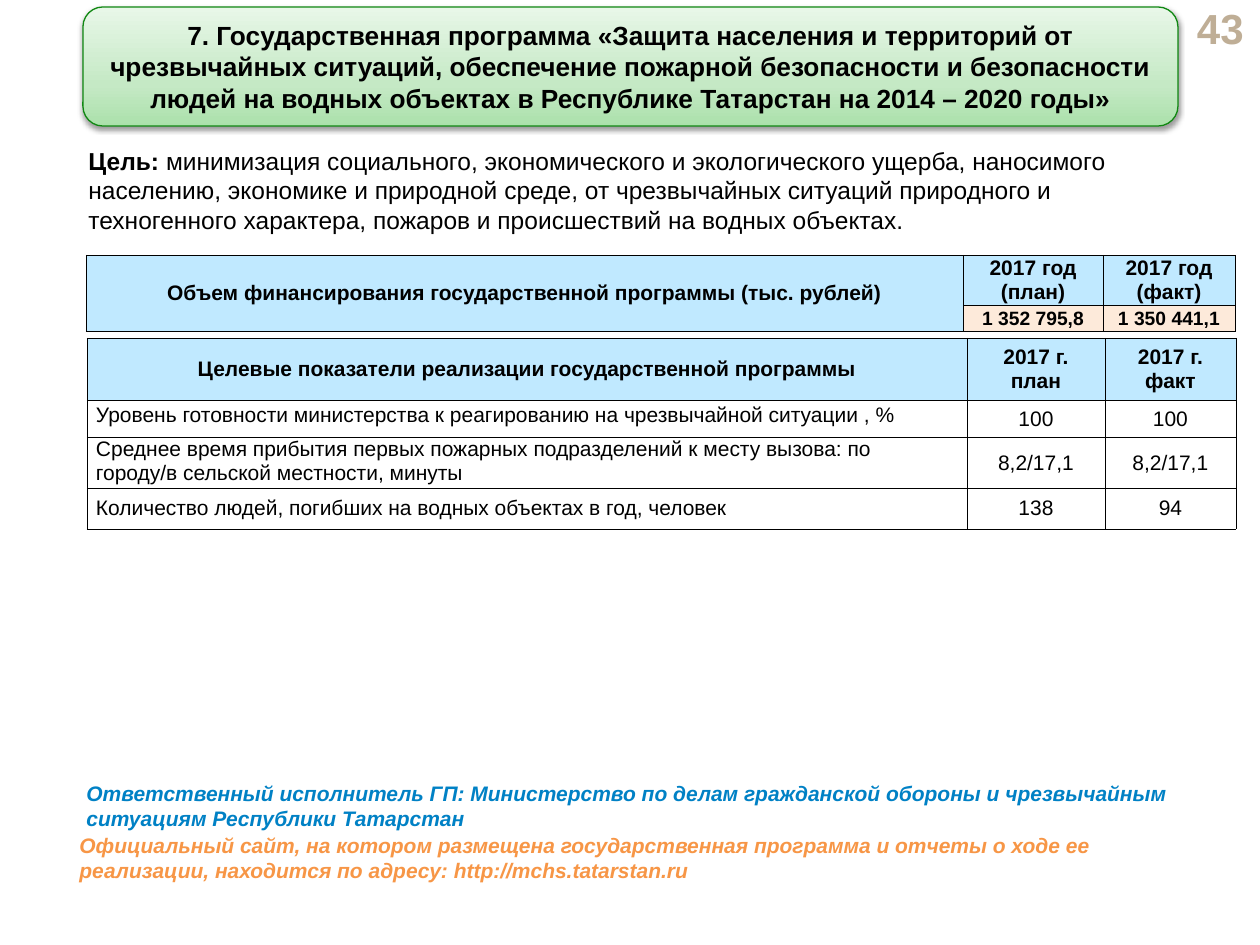
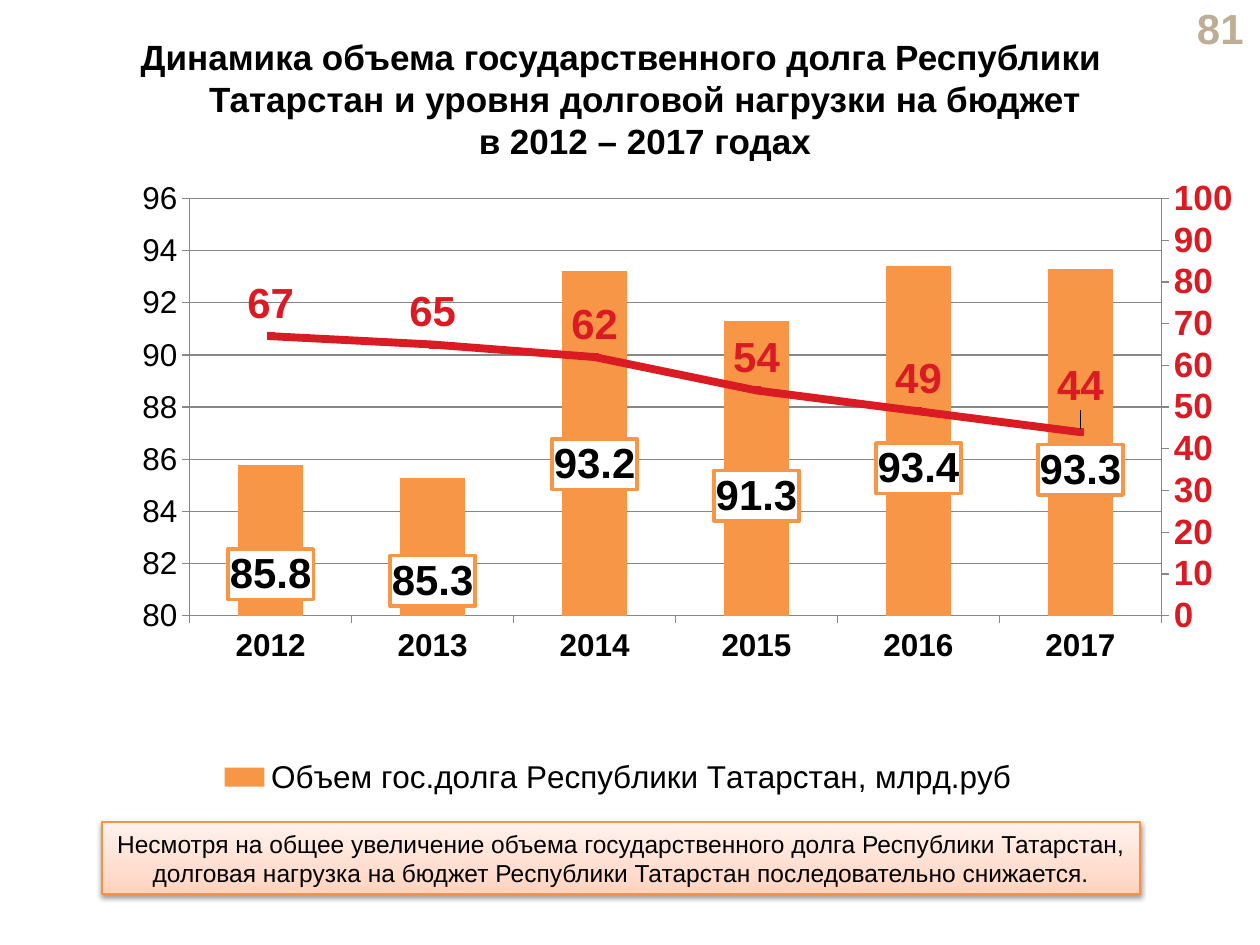
from dataclasses import dataclass

from pptx import Presentation
from pptx import util as u
from pptx.chart import axis as chart_axis
from pptx.chart import data as chart_data
from pptx.dml import color
from pptx.enum import chart as charts
from pptx.enum import shapes, text
from pptx.oxml import parse_xml
from pptx.oxml.ns import nsdecls, qn

PX_PER_INCH = 126
FONT = "Arial"
COLORS = {
    "black": "000000", "white": "FFFFFF", "page": "BFAE96", "header": "C0E9FF",
    "amount": "FDEADA", "owner": "0081C5", "orange": "F79646", "red": "DA1B23",
    "green_line": "108812", "note_line": "F69240", "grid": "868686",
}
GREEN_STOPS = ((0, "ABE1AB"), (35, "C5E9C5"), (100, "E8F7E8"))
PEACH_STOPS = ((0, "FFD2BD"), (35, "FFDED0"), (100, "FFF2ED"))
ALIGN = text.PP_ALIGN
MIDDLE, TOP = text.MSO_ANCHOR.MIDDLE, text.MSO_ANCHOR.TOP


@dataclass
class Box:
    """Place in px."""
    left: int
    top: int
    width: int
    height: int


@dataclass
class Style:
    """Look of a paragraph."""
    size: int
    color: str = "black"
    bold: bool = False
    italic: bool = False
    align: ALIGN = ALIGN.LEFT
    hanging: int = 0


@dataclass
class Panel:
    """Gradient panel with a shadow."""
    kind: shapes.MSO_SHAPE
    stops: tuple
    line: str


@dataclass
class Cell:
    """Content and look of a table cell."""
    words: str
    style: Style
    fill: str = "white"
    margins: tuple = (4, 6)
    anchor: text.MSO_ANCHOR = MIDDLE
    spacing: float = 1.0


TITLE_PANEL = Panel(shapes.MSO_SHAPE.ROUNDED_RECTANGLE, GREEN_STOPS, "green_line")
NOTE_PANEL = Panel(shapes.MSO_SHAPE.RECTANGLE, PEACH_STOPS, "note_line")
HEAD = Style(12, bold=True, align=ALIGN.CENTER)


def px(length: int) -> u.Emu:
    """Turn px into EMU."""
    return u.Emu(round(length * 914400 / PX_PER_INCH))


def place(box: Box) -> tuple:
    """Give a box as EMU lengths."""
    return px(box.left), px(box.top), px(box.width), px(box.height)


def rgb(name: str) -> color.RGBColor:
    """Look a colour up."""
    return color.RGBColor.from_string(COLORS[name])


def set_font(font, size: int, name: str, bold: bool = False, italic: bool = False) -> None:
    """Set every font property."""
    font.name, font.size, font.bold, font.italic = FONT, u.Pt(size), bold, italic
    font.color.rgb = rgb(name)


def write(frame, words: str, style: Style, anchor=TOP) -> None:
    """Fill a text frame, one paragraph a line."""
    frame.word_wrap = True
    frame.vertical_anchor = anchor
    frame.text = words
    for paragraph in frame.paragraphs:
        paragraph.alignment = style.align
        if style.hanging:
            properties = paragraph._p.get_or_add_pPr()
            properties.set("marL", str(px(style.hanging)))
            properties.set("indent", str(-px(style.hanging)))
        set_font(paragraph.font, style.size, style.color, style.bold, style.italic)


def add_text(slide, box: Box, words: str, style: Style, anchor=TOP):
    """Add a text box."""
    shape = slide.shapes.add_textbox(*place(box))
    write(shape.text_frame, words, style, anchor)
    return shape


def add_panel(slide, box: Box, panel: Panel, words: str, style: Style) -> None:
    """Add a gradient panel with text."""
    shape = slide.shapes.add_shape(panel.kind, *place(box))
    stops = "".join(f'<a:gs pos="{position * 1000}"><a:srgbClr val="{value}"/></a:gs>'
                    for position, value in panel.stops)
    shape._element.spPr.append(parse_xml(
        f'<a:gradFill {nsdecls("a")} rotWithShape="1"><a:gsLst>{stops}</a:gsLst>'
        '<a:lin ang="16200000" scaled="0"/></a:gradFill>'))
    shape.line.color.rgb = rgb(panel.line)
    shape.line.width = u.Pt(0.75)
    shape.shadow.inherit = False
    shape._element.spPr.find(qn("a:effectLst")).append(parse_xml(
        f'<a:outerShdw {nsdecls("a")} blurRad="{u.Pt(3.1)}" dist="{u.Pt(1.6)}" dir="5400000" '
        'rotWithShape="0"><a:srgbClr val="000000"><a:alpha val="38000"/></a:srgbClr></a:outerShdw>'))
    write(shape.text_frame, words, style, MIDDLE)


def add_slide(presentation, number: int):
    """Add a blank slide with its page number."""
    slide = presentation.slides.add_slide(presentation.slide_layouts[6])
    add_text(slide, Box(1176, 6, 80, 43), str(number),
             Style(24, "page", True, align=ALIGN.RIGHT), MIDDLE)
    return slide


def fill_cell(cell, content: Cell) -> None:
    """Draw borders, fill and text of a cell."""
    properties = cell._tc.get_or_add_tcPr()
    for side in "LRTB":
        properties.append(parse_xml(
            f'<a:ln{side} {nsdecls("a")} w="{u.Pt(0.25)}"><a:solidFill>'
            f'<a:srgbClr val="{COLORS["black"]}"/></a:solidFill></a:ln{side}>'))
    cell.fill.solid()
    cell.fill.fore_color.rgb = rgb(content.fill)
    across, down = content.margins
    cell.margin_left = cell.margin_right = px(across)
    cell.margin_top = cell.margin_bottom = px(down)
    write(cell.text_frame, content.words, content.style)
    cell.vertical_anchor = content.anchor
    cell.text_frame.paragraphs[0].line_spacing = content.spacing


def add_table(slide, left: int, top: int, widths: list, heights: list, rows: list):
    """Add a table of cells."""
    box = Box(left, top, sum(widths), sum(heights))
    table = slide.shapes.add_table(len(heights), len(widths), *place(box)).table
    table.first_row = table.horz_banding = False
    for column, width in zip(table.columns, widths):
        column.width = px(width)
    for row, height in zip(table.rows, heights):
        row.height = px(height)
    for row, contents in enumerate(rows):
        for column, content in enumerate(contents):
            fill_cell(table.cell(row, column), content)
    return table


def label_xml(offsets: dict, position: str, name: str, boxed: bool):
    """Build data labels with offsets from their usual places."""
    frame = (f'<c:spPr><a:solidFill><a:srgbClr val="{COLORS["white"]}"/></a:solidFill>'
             f'<a:ln w="{u.Pt(2)}"><a:solidFill><a:srgbClr val="{COLORS["orange"]}"/>'
             '</a:solidFill></a:ln></c:spPr>') if boxed else ""
    flags = "".join(f'<c:show{flag} val="{int(flag == "Val")}"/>' for flag in
                    ("LegendKey", "Val", "CatName", "SerName", "Percent", "BubbleSize"))
    look = (f'{frame}<c:txPr><a:bodyPr/><a:p><a:pPr><a:defRPr sz="2400" b="1"><a:solidFill>'
            f'<a:srgbClr val="{COLORS[name]}"/></a:solidFill><a:latin typeface="{FONT}"/>'
            f'</a:defRPr></a:pPr></a:p></c:txPr><c:dLblPos val="{position}"/>{flags}')
    points = "".join(
        f'<c:dLbl><c:idx val="{index}"/><c:layout><c:manualLayout><c:x val="{x}"/>'
        f'<c:y val="{y}"/></c:manualLayout></c:layout>{look}</c:dLbl>'
        for index, (x, y) in offsets.items())
    return parse_xml(f'<c:dLbls {nsdecls("c", "a")}>{points}{look}</c:dLbls>')


def layout_xml(x: float, y: float, width: float, height: float, inner: bool = False):
    """Build a manual layout in fractions of the chart."""
    target = '<c:layoutTarget val="inner"/>' if inner else ""
    return parse_xml(
        f'<c:layout {nsdecls("c")}><c:manualLayout>{target}<c:xMode val="edge"/>'
        f'<c:yMode val="edge"/><c:x val="{x}"/><c:y val="{y}"/><c:w val="{width}"/>'
        f'<c:h val="{height}"/></c:manualLayout></c:layout>')


def remove_children(element, tag: str) -> None:
    """Remove every child with a tag."""
    for child in element.findall(qn(tag)):
        element.remove(child)


def move_to_right_axis(chart) -> chart_axis.ValueAxis:
    """Turn the last bar series into a line on a second axis."""
    area = chart._chartSpace.chart.plotArea
    bars = area.find(qn("c:barChart"))
    series = bars.findall(qn("c:ser"))[-1]
    remove_children(series, "c:invertIfNegative")
    line = parse_xml(
        f'<c:lineChart {nsdecls("c")}><c:grouping val="standard"/><c:varyColors val="0"/>'
        '<c:marker val="1"/><c:axId val="50010"/><c:axId val="50020"/></c:lineChart>')
    line.insert(2, series)
    bars.addnext(line)
    start = ('<c:axId val="{}"/><c:scaling><c:orientation val="minMax"/></c:scaling>'
             '<c:delete val="{}"/><c:axPos val="{}"/>')
    categories = parse_xml(
        f'<c:catAx {nsdecls("c")}>{start.format(50010, 1, "b")}<c:crossAx val="50020"/></c:catAx>')
    values = parse_xml(
        f'<c:valAx {nsdecls("c")}>{start.format(50020, 0, "r")}'
        '<c:numFmt formatCode="General" sourceLinked="0"/><c:majorTickMark val="out"/>'
        '<c:minorTickMark val="none"/><c:tickLblPos val="nextTo"/><c:crossAx val="50010"/>'
        '<c:crosses val="max"/></c:valAx>')
    last = area.findall(qn("c:valAx"))[-1]
    last.addnext(categories)
    categories.addnext(values)
    return chart_axis.ValueAxis(values)


def style_axis(axis, size: int, name: str) -> None:
    """Set the line, ticks and labels of an axis."""
    axis.format.line.color.rgb = rgb("grid")
    axis.major_tick_mark = charts.XL_TICK_MARK.OUTSIDE
    set_font(axis.tick_labels.font, size, name, bold=True)


def add_debt_chart(slide, box: Box) -> None:
    """Add debt bars with the debt load line."""
    data = chart_data.CategoryChartData()
    data.categories = [str(year) for year in range(2012, 2018)]
    data.add_series("Объем гос.долга Республики Татарстан, млрд.руб",
                    (85.8, 85.3, 93.2, 91.3, 93.4, 93.3))
    data.add_series("Долговая нагрузка на бюджет Республики Татарстан,%", (67, 65, 62, 54, 49, 44))
    chart = slide.shapes.add_chart(charts.XL_CHART_TYPE.COLUMN_STACKED, *place(box), data).chart
    set_font(chart.font, 18, "black")
    chart.has_title = False
    right_axis = move_to_right_axis(chart)
    left_axis = chart.value_axis
    style_axis(chart.category_axis, 18, "black")
    for axis, name, low, step in ((left_axis, "orange", 75, 5), (right_axis, "red", 0, 10)):
        style_axis(axis, 20, name)
        axis.minimum_scale, axis.maximum_scale, axis.major_unit = low, 100, step
    left_axis.tick_labels.number_format = "#,##0"
    left_axis.tick_labels.number_format_is_linked = False
    left_axis.major_gridlines.format.line.color.rgb = rgb("grid")

    bars, lines = chart.plots
    bars.gap_width, bars.overlap, bars.vary_by_categories = 150, 100, False
    debt, load = bars.series[0], lines.series[0]
    load.smooth = False
    load.format.line.color.rgb = rgb("red")
    load.format.line.width = u.Pt(4.5)
    load.marker.style, load.marker.size = charts.XL_MARKER_STYLE.SQUARE, 4
    for shape_format, name in ((debt.format, "orange"), (load.marker.format, "red")):
        shape_format.fill.solid()
        shape_format.fill.fore_color.rgb = rgb(name)
    load.marker.format.line.color.rgb = rgb("red")
    drops = {index: (0, y) for index, y in enumerate((0.05, 0.05, 0.03, 0.04, 0.04, 0.04))}
    for series, labels in ((debt, label_xml(drops, "ctr", "black", True)),
                           (load, label_xml({5: (0, -0.02)}, "t", "red", False))):
        series._element.find(qn("c:cat")).addprevious(labels)

    chart.has_legend = True
    legend = chart.legend
    legend.position = charts.XL_LEGEND_POSITION.BOTTOM
    legend.include_in_layout = False
    set_font(legend.font, 18, "black")
    remove_children(legend._element, "c:layout")
    legend._element.get_or_add_legendPos().addnext(layout_xml(0.12, 0.88, 0.74, 0.12))
    area = chart._chartSpace.chart.plotArea
    remove_children(area, "c:layout")
    area.insert(0, layout_xml(0.1, 0.09, 0.84, 0.61, inner=True))


def build_program_slide(presentation) -> None:
    """Build the state program slide."""
    slide = add_slide(presentation, 43)
    add_panel(slide, Box(83, 7, 1095, 119), TITLE_PANEL,
              "7. Государственная программа «Защита населения и территорий от чрезвычайных ситуаций, "
              "обеспечение пожарной безопасности и безопасности людей на водных объектах "
              "в Республике Татарстан на 2014 – 2020 годы»", HEAD_TITLE)
    goal = add_text(slide, Box(76, 139, 1129, 102), "Цель: ", Style(14), MIDDLE)
    paragraph = goal.text_frame.paragraphs[0]
    paragraph.runs[0].font.bold = True
    paragraph.add_run().text = (
        "минимизация социального, экономического и экологического ущерба, наносимого населению, "
        "экономике и природной среде, от чрезвычайных ситуаций природного и техногенного характера, "
        "пожаров и происшествий на водных объектах.")

    amount = Style(11, bold=True, align=ALIGN.CENTER)
    funding = [[Cell(words, HEAD, "header", (8, 0)) for words in (
        "Объем финансирования государственной программы (тыс. рублей)",
        "2017 год (план)", "2017 год (факт)")],
        [Cell(words, amount, "amount", (8, 0)) for words in ("", "1 352 795,8", "1 350 441,1")]]
    table = add_table(slide, 86, 255, [877, 140, 132], [50, 26], funding)
    table.cell(0, 0).merge(table.cell(1, 0))

    targets = [[Cell(words, HEAD, "header") for words in (
        "Целевые показатели реализации государственной программы",
        "2017 г.\nплан", "2017 г.\nфакт")]]
    for name, plan, fact, anchor, spacing in (
            ("Уровень готовности министерства к реагированию на чрезвычайной ситуации , %",
             "100", "100", TOP, 1.15),
            ("Среднее время прибытия первых пожарных подразделений к месту вызова: "
             "по городу/в сельской местности, минуты", "8,2/17,1", "8,2/17,1", TOP, 1.0),
            ("Количество людей, погибших на водных объектах в год, человек", "138", "94", MIDDLE, 1.0)):
        targets.append([Cell(name, Style(12), margins=(9, 0), anchor=anchor, spacing=spacing)]
                       + [Cell(value, Style(12, align=ALIGN.CENTER)) for value in (plan, fact)])
    add_table(slide, 87, 338, [880, 138, 131], [62, 37, 50, 41], targets)

    for box, words, name in (
            (Box(74, 774, 1176, 63), "Ответственный исполнитель ГП: Министерство по делам гражданской "
             "обороны и чрезвычайным ситуациям Республики Татарстан", "owner"),
            (Box(67, 826, 1103, 63), "Официальный сайт, на котором размещена государственная программа и "
             "отчеты о ходе ее реализации, находится по адресу: http://mchs.tatarstan.ru", "orange")):
        add_text(slide, box, words, Style(12, name, True, True))


def build_debt_slide(presentation) -> None:
    """Build the state debt slide."""
    slide = add_slide(presentation, 81)
    add_debt_chart(slide, Box(74, 137, 1159, 684))
    add_panel(slide, Box(102, 822, 1038, 72), NOTE_PANEL,
              "Несмотря на общее увеличение объема государственного долга Республики Татарстан, "
              "долговая нагрузка на бюджет Республики Татарстан последовательно снижается.",
              Style(14, align=ALIGN.CENTER))
    add_text(slide, Box(74, 29, 1094, 149),
             "Динамика объема государственного долга Республики Татарстан и уровня долговой "
             "нагрузки на бюджет\vв 2012 – 2017 годах",
             Style(20, bold=True, align=ALIGN.CENTER, hanging=48))


HEAD_TITLE = Style(15, bold=True, align=ALIGN.CENTER)


def main() -> None:
    """Build and save the presentation."""
    presentation = Presentation()
    presentation.slide_width, presentation.slide_height = px(1260), px(945)
    build_program_slide(presentation)
    build_debt_slide(presentation)
    presentation.save("out.pptx")


if __name__ == "__main__":
    main()
